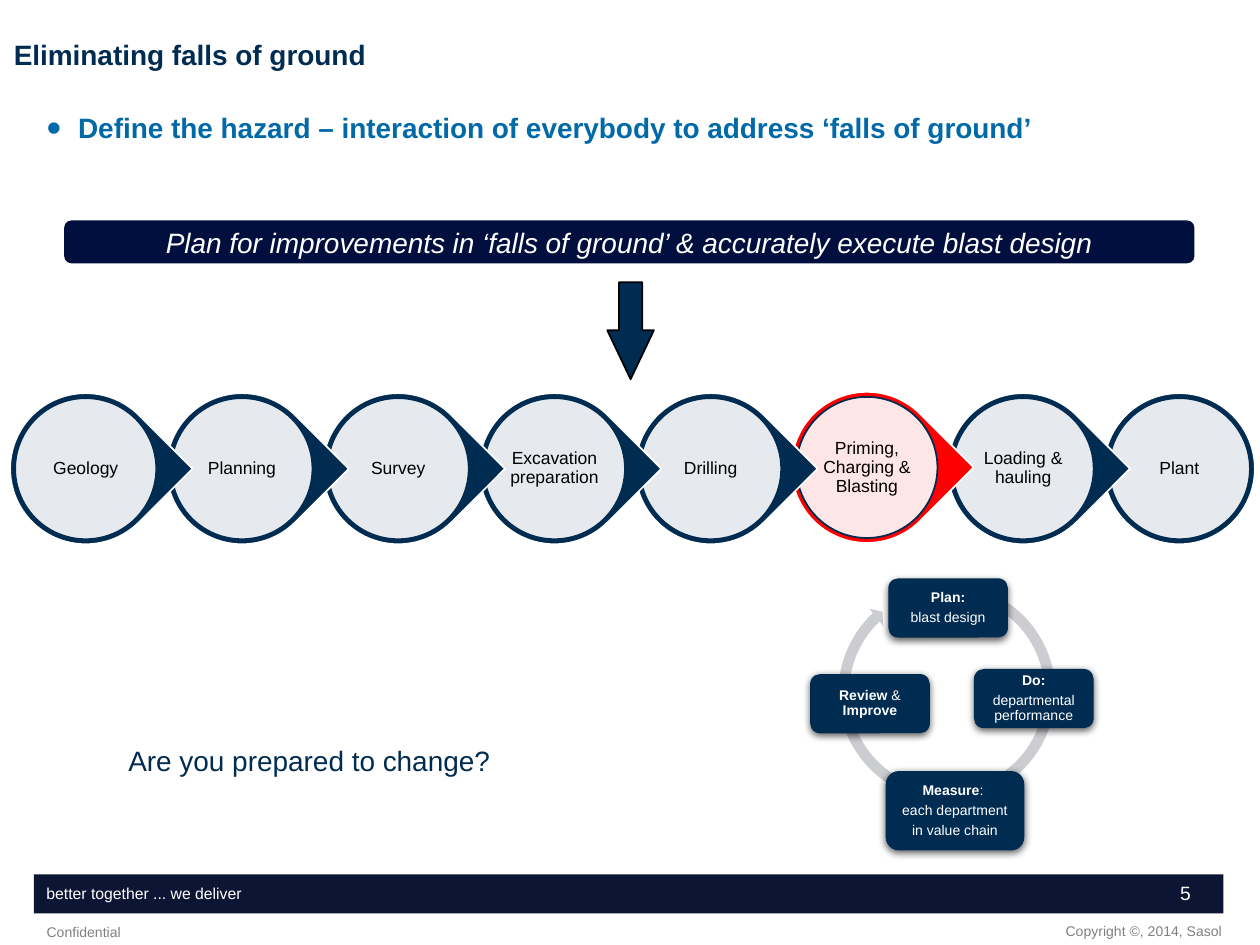
from lxml import etree
from pptx import Presentation
from pptx.dml.color import RGBColor
from pptx.enum.shapes import MSO_SHAPE
from pptx.enum.text import MSO_ANCHOR, MSO_AUTO_SIZE, PP_ALIGN
from pptx.oxml import parse_xml
from pptx.oxml.ns import qn
from pptx.util import Inches, Pt

LEFT, MID, RIGHT = PP_ALIGN.LEFT, PP_ALIGN.CENTER, PP_ALIGN.RIGHT
ROUND, RECT = MSO_SHAPE.ROUNDED_RECTANGLE, MSO_SHAPE.RECTANGLE
OVAL, DROP = MSO_SHAPE.OVAL, MSO_SHAPE.TEAR
NS = 'xmlns:a="http://schemas.openxmlformats.org/drawingml/2006/main"'
COLORS = {"navy": "002C52", "bar": "0C1533", "banner": "000F3D", "blue": "0069A8",
          "red": "FF0000", "ring": "CCCDD1", "grey": "808080",
          "white": "FFFFFF", "black": "000000"}
RGB = {name: RGBColor.from_string(code) for name, code in COLORS.items()}

prs = Presentation()
prs.slide_width, prs.slide_height = Inches(10), Inches(7.5)
slide = prs.slides.add_slide(prs.slide_layouts[1])
shapes = slide.shapes


def draw(kind, x, y, w, h, fill, line=None):
    shape = shapes.add_shape(kind, Inches(x), Inches(y), Inches(w), Inches(h))
    shape.shadow.inherit = False
    shape.fill.solid()
    shape.fill.fore_color.rgb = RGB[fill]
    if line:
        shape.line.color.rgb = RGB[line]
        shape.line.width = Pt(1)
    else:
        shape.line.fill.background()
    return shape


def write(shape, paras, size, color, align=LEFT, inset=None, gap=0, space=1.0,
          anchor=MSO_ANCHOR.MIDDLE, wrap=True):
    """Each paragraph is a list of (text, bold) runs."""
    frame = shape.text_frame
    frame.auto_size = MSO_AUTO_SIZE.NONE
    frame.word_wrap = wrap
    frame.vertical_anchor = anchor
    if inset is not None:
        frame.margin_left = frame.margin_right = Inches(inset)
        frame.margin_top = frame.margin_bottom = Inches(inset)
    for i, runs in enumerate(paras):
        para = frame.add_paragraph() if i else frame.paragraphs[0]
        para.alignment = align
        para.line_spacing = space
        para.space_before, para.space_after = Pt(0), Pt(gap)
        for text, bold in runs:
            run = para.add_run()
            run.text = text
            run.font.name, run.font.size = "Arial", Pt(size)
            run.font.bold = bold
            run.font.color.rgb = RGB[color]
    return frame


# Footer
bar = draw(RECT, 0.27, 6.94, 9.44, 0.31, "bar")
write(bar, [[("better together ... we deliver", False)]], 9, "white", space=0.9)
notes = [("Copyright ©, 2014, Sasol", 5.05, 7.27, 4.65, 0.23, 8, "grey", RIGHT, 0),
         ("Confidential", 0.37, 7.28, 4.65, 0.23, 8, "grey", LEFT, 0),
         ("5", 7.3, 6.94, 2.25, 0.3, 11, "white", RIGHT, None)]
for text, x, y, w, h, size, color, align, inset in notes:
    box = shapes.add_textbox(Inches(x), Inches(y), Inches(w), Inches(h))
    write(box, [[(text, False)]], size, color, align, inset)

# Title and bullet
title, body = shapes.title, slide.placeholders[1]
spots = [(title, 0.01, 0.01, 7.02, 0.87), (body, 0.27, 0.86, 9.43, 0.38)]
for holder, x, y, w, h in spots:
    holder.left, holder.top = Inches(x), Inches(y)
    holder.width, holder.height = Inches(w), Inches(h)
write(title, [[("Eliminating falls of ground", True)]], 16, "navy", space=0.9)
frame = write(body, [[("Define the hazard – interaction of everybody to address "
                       "‘falls of ground’", True)]],
              16, "blue", space=0.9, anchor=MSO_ANCHOR.TOP)
props = frame.paragraphs[0]._p.get_or_add_pPr()
props.set("marL", str(Inches(0.25)))
props.set("indent", str(-Inches(0.25)))
etree.SubElement(props, qn("a:buSzPct"), val="150000")
etree.SubElement(props, qn("a:buFont"), typeface="Arial")
etree.SubElement(props, qn("a:buChar"), char="•")

# Banner and arrow
banner = draw(ROUND, 0.51, 1.75, 8.97, 0.34, "banner")
frame = write(banner, [[("Plan for improvements in ‘falls of ground’ & accurately "
                         "execute blast design", False)]], 16, "white", MID, wrap=False)
frame.paragraphs[0].runs[0].font.italic = True
arrow = draw(MSO_SHAPE.DOWN_ARROW, 4.82, 2.24, 0.37, 0.77, "navy", "black")
arrow.adjustments[1] = 1.05

# Value chain, drawn from the right so that each tip lies over the next step
steps = ["Geology", "Planning", "Survey", "Excavation preparation", "Drilling",
         "Priming, Charging & Blasting", "Loading & hauling", "Plant"]
for i, step in reversed(list(enumerate(steps))):
    hot, last = step.startswith("Priming"), i == len(steps) - 1
    x, y = 0.08 + 1.24 * i, 3.11 if hot else 3.12
    drop = draw(OVAL if last else DROP, x, y, 1.2, 1.2, "red" if hot else "navy", "white")
    if not last:
        drop.rotation = 45
    disc = draw(OVAL, x + 0.04, y + 0.04, 1.12, 1.12, "white", "navy")
    tint = disc.fill._xPr.find(qn("a:solidFill"))[0]
    etree.SubElement(tint, qn("a:alpha"), val="90000")
    write(disc, [[(step, False)]], 10, "black", MID, 0, 3.5, 0.9)

# Improvement cycle
ring = draw(MSO_SHAPE.CIRCULAR_ARROW, 6.61, 4.59, 1.81, 1.81, "ring")
for i, value in enumerate([0.047, 2.729, 136.076, 175.252, 0.048]):
    ring.adjustments[i] = value
cycle = [
    (7.05, 4.59, 0.95, 0.47, [[("Plan:", True)], [("blast design", False)]]),
    (7.73, 5.31, 0.95, 0.47, [[("Do:", True)], [("departmental performance", False)]]),
    (7.03, 6.12, 1.1, 0.63, [[("Measure", True), (": ", False)],
                             [("each department", False)], [("in value chain", False)]]),
    (6.43, 5.35, 0.95, 0.47, [[("Review", True), (" & ", False), ("Improve", True)]]),
]
for x, y, w, h, paras in cycle:
    card = draw(ROUND, x, y, w, h, "navy")
    glow = card._element.spPr.find(qn("a:effectLst"))
    glow.append(parse_xml(
        f'<a:outerShdw {NS} blurRad="{Pt(4.5)}" dist="{Pt(1.5)}" dir="5400000" '
        f'rotWithShape="0"><a:srgbClr val="{COLORS["black"]}"><a:alpha val="63000"/>'
        '</a:srgbClr></a:outerShdw>'))
    write(card, paras, 8, "white", MID, 0.03, 2.8, 0.9)

# Closing question
ask = shapes.add_textbox(Inches(0.92), Inches(5.85), Inches(3.11), Inches(0.37))
write(ask, [[("Are you prepared to change?", False)]], 16, "navy", wrap=False)

prs.save("out.pptx")
